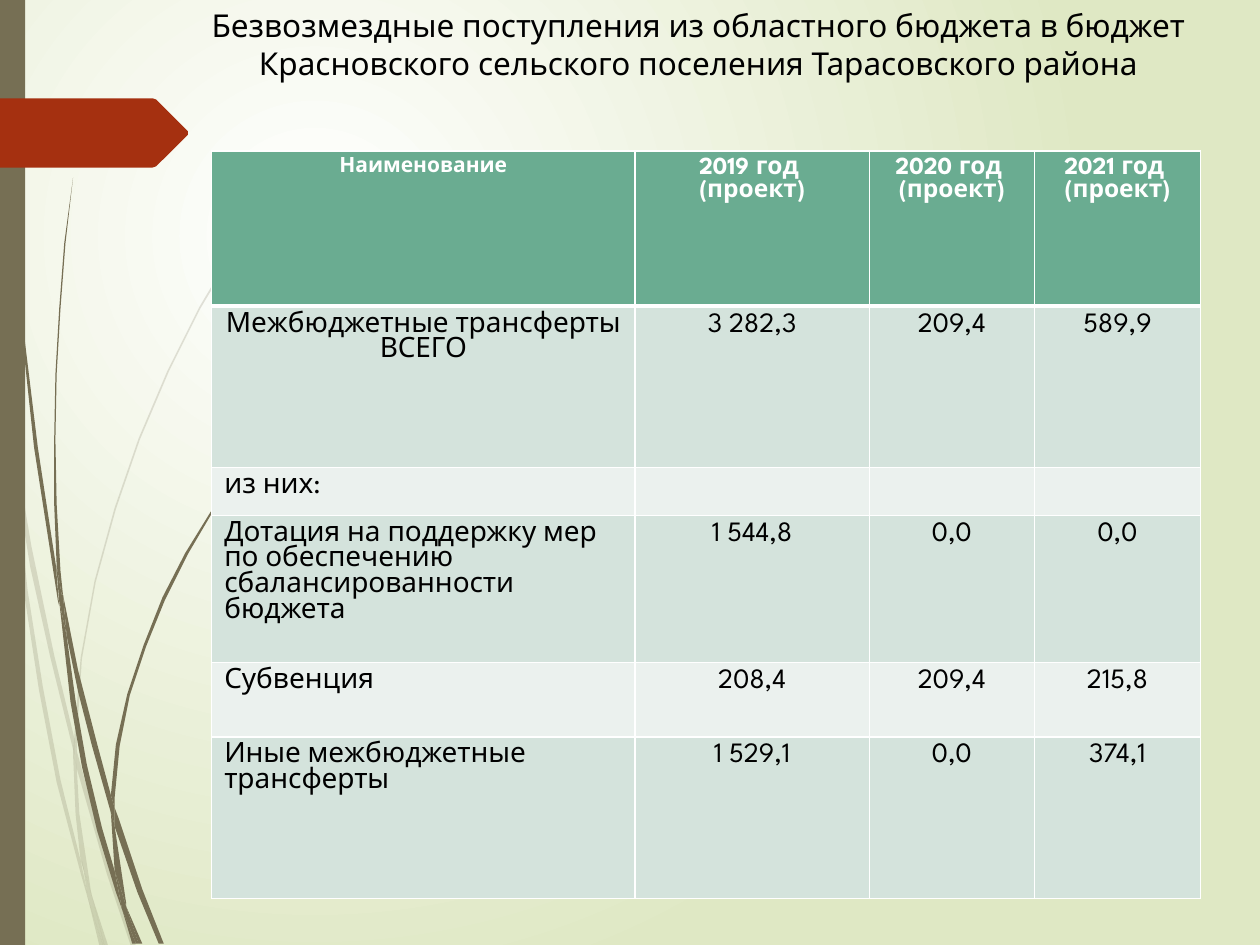
"""Build the slide on transfers from the regional budget to a rural settlement."""
from lxml import etree
from pptx import Presentation
from pptx.dml.color import RGBColor
from pptx.enum.shapes import MSO_SHAPE
from pptx.enum.text import MSO_ANCHOR, PP_ALIGN
from pptx.oxml.ns import qn
from pptx.util import Pt

PX = 9144
FONT = "League Spartan"
CENTER, LEFT = PP_ALIGN.CENTER, PP_ALIGN.LEFT
OLIVE, RED, WHITE, BLACK = "766F54", "A53010", "FFFFFF", "000000"

PALE_STEMS = [
    [(8, 350), (6, 322), (0, 282), (0, 299), (7, 344)],
    [(40, 522), (59, 599), (59, 586), (43, 520), (25, 434), (10, 345), (12, 376), (24, 450)],
    [(64, 607), (61, 596), (61, 610), (85, 694), (104, 751), (108, 751), (88, 692)],
    [(83, 751), (86, 751), (73, 711)],
    [(64, 683), (48, 619), (34, 545), (22, 469), (12, 376), (8, 350), (19, 470),
     (31, 548), (45, 621), (64, 693), (70, 714), (69, 707)],
    [(58, 599), (60, 646), (64, 683), (67, 692), (73, 711), (72, 706), (63, 646),
     (61, 610), (61, 608)],
    [(61, 584), (65, 523), (76, 462), (92, 404), (111, 349), (134, 295), (159, 245),
     (187, 198), (201, 175), (217, 154), (217, 153), (201, 175), (186, 197), (158, 244),
     (133, 294), (110, 348), (91, 403), (75, 461), (64, 522), (59, 584), (59, 586), (61, 596)],
    [(70, 714), (79, 751), (82, 751)],
    [(61, 608), (61, 610), (61, 596), (59, 586), (58, 599)],
    [(67, 692), (65, 683), (69, 707), (70, 714), (82, 751), (83, 751), (73, 711)],
]
DARK_STEMS = [
    [(5, 110), (14, 233), (27, 355), (46, 477), (47, 481), (45, 457), (45, 453), (30, 355),
     (15, 232), (6, 109), (4, 48), (3, 0), (2, 0), (3, 48)],
    [(73, 592), (88, 645), (88, 633), (88, 631), (77, 590), (62, 532), (50, 472), (53, 505),
     (62, 549)],
    [(94, 649), (91, 641), (91, 656), (109, 708), (126, 749), (130, 749), (113, 706)],
    [(91, 691), (81, 657), (69, 607), (60, 556), (53, 505), (47, 477), (56, 557), (65, 608),
     (77, 659), (92, 708), (97, 722), (96, 717)],
    [(50, 472), (48, 453), (45, 400), (44, 349), (45, 297), (48, 245), (52, 193), (58, 141),
     (51, 193), (47, 245), (44, 297), (43, 349), (43, 400), (45, 449), (49, 472)],
    [(110, 749), (113, 749), (100, 719)],
    [(47, 477), (53, 505), (50, 472), (49, 472), (45, 449), (45, 453)],
    [(91, 633), (95, 592), (103, 552), (116, 513), (131, 476), (149, 440), (169, 406),
     (191, 374), (203, 359), (216, 344), (215, 344), (203, 358), (191, 373), (168, 405),
     (147, 439), (129, 474), (114, 512), (101, 551), (92, 591), (88, 631), (91, 641)],
    [(97, 722), (105, 749), (108, 749)],
    [(88, 645), (91, 691), (96, 706), (100, 719), (100, 716), (91, 656), (90, 651)],
    [(88, 645), (90, 651), (91, 656), (91, 641), (88, 631), (88, 633)],
    [(96, 706), (91, 691), (96, 717), (97, 722), (108, 749), (110, 749), (100, 719)],
]
POINTER = [(149, 107), (124, 132), (121, 133), (0, 133), (0, 78), (121, 78), (124, 79),
           (149, 104)]

COLUMNS = [336, 186, 131, 132]
ROWS = [
    (123, ["Наименование", "2019 год \v(проект)", "2020 год \v(проект)", "2021 год \v(проект)"]),
    (128, ["Межбюджетные трансферты ВСЕГО", "3 282,3", "209,4", "589,9"]),
    (37, ["из них:", "", "", ""]),
    (117, ["Дотация на поддержку мер по обеспечению сбалансированности бюджета",
           "1 544,8", "0,0", "0,0"]),
    (59, ["Субвенция", "208,4", "209,4", "215,8"]),
    (128, ["Иные межбюджетные трансферты", "1 529,1", "0,0", "374,1"]),
]


def color(value):
    return RGBColor.from_string(value)


def add_outline(shapes, points, fill):
    builder = shapes.build_freeform(*points[0], scale=PX)
    builder.add_line_segments(points[1:], close=True)
    shape = builder.convert_to_shape()
    shape.shadow.inherit = False
    shape.fill.solid()
    shape.fill.fore_color.rgb = color(fill)
    shape.line.fill.background()
    return shape


presentation = Presentation()
presentation.slide_width, presentation.slide_height = 1000 * PX, 750 * PX
slide = presentation.slides.add_slide(presentation.slide_layouts[5])

background = slide.background.fill
background.gradient()
for stop, position, value in zip(background.gradient_stops, (0, 1), (WHITE, "DFE8C4")):
    stop.position = position
    stop.color.rgb = color(value)
gradient = slide.background._cSld.find(".//" + qn("a:gradFill"))
gradient.remove(gradient.find(qn("a:lin")))
circle = etree.SubElement(gradient, qn("a:path"), path="circle")
etree.SubElement(circle, qn("a:fillToRect"), l="50000", t="50000", r="100000", b="100000")

pale_group = slide.shapes.add_group_shape()
for points in PALE_STEMS:
    stem = add_outline(pale_group.shapes, points, OLIVE)
    stem_color = stem._element.spPr.find(qn("a:solidFill"))[0]
    etree.SubElement(stem_color, qn("a:alpha"), val="20000")
dark_group = slide.shapes.add_group_shape()
for points in DARK_STEMS:
    add_outline(dark_group.shapes, points, OLIVE)

side_bar = slide.shapes.add_shape(MSO_SHAPE.RECTANGLE, 0, 0, 20 * PX, 750 * PX)
side_bar.shadow.inherit = False
side_bar.fill.solid()
side_bar.fill.fore_color.rgb = color(OLIVE)
side_bar.line.fill.background()
add_outline(slide.shapes, POINTER, RED)

title = slide.shapes.title
title.left, title.top, title.width, title.height = 109 * PX, 0, 891 * PX, 101 * PX
title.text_frame.text = ("Безвозмездные поступления из областного бюджета в бюджет "
                         "Красновского сельского поселения Тарасовского района")
title.text_frame.word_wrap = True
title.text_frame.vertical_anchor = MSO_ANCHOR.TOP
paragraph = title.text_frame.paragraphs[0]
paragraph.alignment = CENTER
title_font = paragraph.runs[0].font
title_font.name, title_font.size = FONT, Pt(18)
title_font.color.rgb = color(BLACK)

table = slide.shapes.add_table(len(ROWS), len(COLUMNS), 168 * PX, 120 * PX,
                               sum(COLUMNS) * PX, sum(height for height, _ in ROWS) * PX).table
for column, width in zip(table.columns, COLUMNS):
    column.width = width * PX
for row_index, (height, texts) in enumerate(ROWS):
    table.rows[row_index].height = height * PX
    is_header = row_index == 0
    fill = "6AAC91" if is_header else ("EBF1EE", "D4E3DC")[row_index % 2]
    for column_index, text in enumerate(texts):
        cell = table.cell(row_index, column_index)
        paragraph = cell.text_frame.paragraphs[0]
        paragraph.text = text
        paragraph.alignment = LEFT if column_index == 0 and row_index > 1 else CENTER
        size = 16 if not is_header else 12 if column_index == 0 else 14
        for run in paragraph.runs or [paragraph.add_run()]:
            run.font.name, run.font.size, run.font.bold = FONT, Pt(size), is_header
            run.font.color.rgb = color(WHITE if is_header else BLACK)
        properties = cell._tc.get_or_add_tcPr()
        for side in ("lnL", "lnR", "lnT", "lnB"):
            thick = (is_header and side == "lnB") or (row_index == 1 and side == "lnT")
            border = etree.SubElement(properties, qn("a:" + side), w=str(Pt(3 if thick else 1)))
            border_fill = etree.SubElement(border, qn("a:solidFill"))
            etree.SubElement(border_fill, qn("a:srgbClr"), val=WHITE)
        cell.fill.solid()
        cell.fill.fore_color.rgb = color(fill)

presentation.save("out.pptx")
